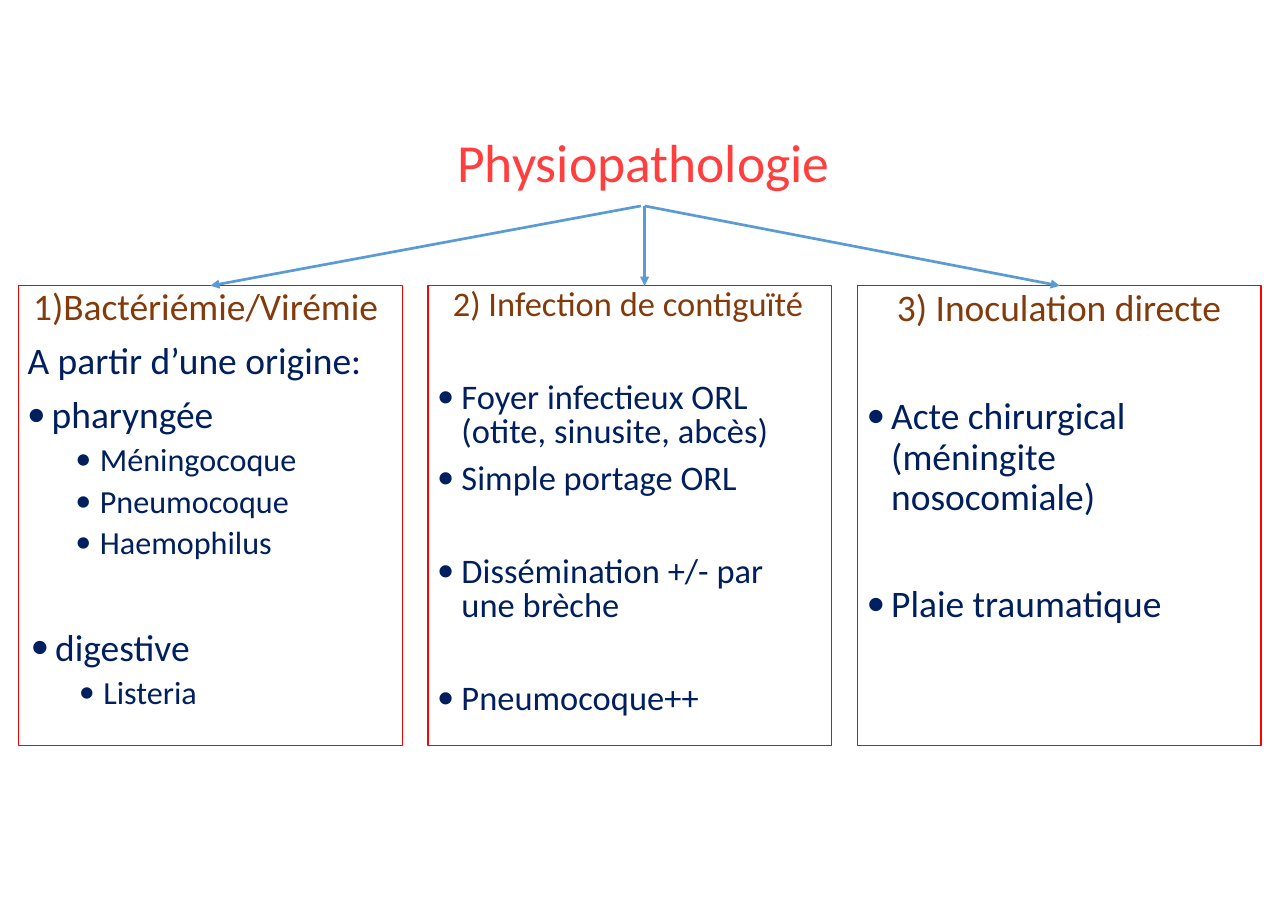
from lxml import etree
from pptx import Presentation
from pptx.dml.color import RGBColor
from pptx.enum import shapes, text
from pptx.oxml.ns import qn
from pptx.util import Pt

COLORS = {"title": "FF3E3E", "heading": "843B0B", "body": "001F5F",
          "frame": "FF0000", "arrow": "5A9AD5"}
BULLET_HANG = 16
# Text indent of each bullet level
LEVEL_INDENT = {1: 16.5, 2: 48}

FRAME_TOP, FRAME_HEIGHT, FRAME_GAP = 186.8, 300.4, 16.4
FRAME_WIDTHS = (251.4, 264, 264)
ARROW_TOP = 134.6
ARROWS = ((418.8, 137.5), (421.2, 421.2), (421.2, 692.6))


def color(name):
    return RGBColor.from_string(COLORS[name])


def line(content, size, tone="body", level=0, before=0, spacing=None, indent=0):
    """Describe one paragraph; level 0 has no bullet."""
    return dict(content=content, size=size, tone=tone, level=level,
                before=before, spacing=spacing, indent=indent)


def add_paragraph(paragraph, item):
    paragraph.space_before = Pt(item["before"])
    if item["spacing"]:
        paragraph.line_spacing = item["spacing"]
    properties = paragraph._p.get_or_add_pPr()
    level = item["level"]
    if level:
        paragraph.level = level - 1
        properties.set("marL", str(Pt(LEVEL_INDENT[level])))
        properties.set("indent", str(-Pt(BULLET_HANG)))
        etree.SubElement(properties, qn("a:buFont")).set("typeface", "Calibri")
        etree.SubElement(properties, qn("a:buChar")).set("char", "•")
    else:
        properties.set("marL", str(Pt(item["indent"])))
    run = paragraph.add_run()
    run.text = item["content"]
    run.font.name = "Calibri"
    run.font.size = Pt(item["size"])
    run.font.color.rgb = color(item["tone"])


def add_text(slide, left, top, width, height, inset, *items):
    box = slide.shapes.add_textbox(Pt(left), Pt(top), Pt(width), Pt(height))
    frame = box.text_frame
    frame.word_wrap = True
    frame.vertical_anchor = text.MSO_ANCHOR.TOP
    frame.margin_left = frame.margin_right = frame.margin_bottom = 0
    frame.margin_top = Pt(inset)
    for index, item in enumerate(items):
        paragraph = frame.add_paragraph() if index else frame.paragraphs[0]
        add_paragraph(paragraph, item)


def add_frames(slide):
    left = 11.9
    for width in FRAME_WIDTHS:
        frame = slide.shapes.add_shape(
            shapes.MSO_SHAPE.RECTANGLE, Pt(left), Pt(FRAME_TOP),
            Pt(width), Pt(FRAME_HEIGHT))
        frame.shadow.inherit = False
        frame.fill.background()
        frame.line.color.rgb = color("frame")
        frame.line.width = Pt(0.75)
        left += width + FRAME_GAP


def add_arrow(slide, start, end):
    arrow = slide.shapes.add_connector(
        shapes.MSO_CONNECTOR.STRAIGHT, Pt(start), Pt(ARROW_TOP),
        Pt(end), Pt(FRAME_TOP))
    arrow.line.color.rgb = color("arrow")
    arrow.line.width = Pt(1.75)
    tip = etree.SubElement(arrow.line._get_or_add_ln(), qn("a:tailEnd"))
    tip.set("type", "triangle")
    etree.SubElement(arrow._element.spPr, qn("a:effectLst"))


def add_bacteremia(slide):
    add_text(slide, 17.3, 178.6, 240, 189, 0.7,
             line("1)Bactériémie/Virémie", 24.5, "heading", before=0.9,
                  spacing=1.2, indent=4.3),
             line("A partir d’une origine:", 24.5, spacing=1.2, indent=0.7),
             line("pharyngée", 24.5, level=1, before=5.9),
             *(line(germ, 21, level=2, before=2)
               for germ in ("Méningocoque", "Pneumocoque", "Haemophilus")))
    add_text(slide, 19.6, 404, 150, 61, 3.6,
             line("digestive", 24.5, level=1, before=3.6),
             line("Listeria", 21, level=2, before=2.2))


def add_contiguity(slide):
    left, width, size = 285.1, 221, 22.5
    tight = Pt(21.8)
    add_text(slide, 295.2, 182.9, 240, 29.5, 1.4,
             line("2) Infection de contiguïté", size, "heading",
                  before=1.3, indent=0.7))
    add_text(slide, left, 244.1, width, 82, 6.5,
             line("Foyer infectieux ORL (otite, sinusite, abcès)", size,
                  level=1, before=6.3, spacing=tight),
             line("Simple portage ORL", size, level=1, before=3.8))
    add_text(slide, left, 357.8, width, 51, 6.5,
             line("Dissémination +/- par une brèche", size, level=1,
                  before=6.3, spacing=tight))
    add_text(slide, left, 440.6, width, 29.5, 1.4,
             line("Pneumocoque++", size, level=1, before=1.3))


def add_inoculation(slide):
    left, size = 565.9, 24.5
    add_text(slide, 585.4, 184.3, 230, 31.7, 1.4,
             line("3) Inoculation directe", size, "heading",
                  before=1.1, indent=0.7))
    add_text(slide, left, 254.9, 180, 85, 4.3,
             line("Acte chirurgical (méningite nosocomiale)", size, level=1,
                  before=4.4, spacing=Pt(26.5)))
    add_text(slide, left, 378, 210, 31.7, 1.4,
             line("Plaie traumatique", size, level=1, before=1.1))


def main():
    deck = Presentation()
    deck.slide_width, deck.slide_height = Pt(841.68), Pt(594.72)
    slide = deck.slides.add_slide(deck.slide_layouts[6])
    add_text(slide, 298.8, 83.5, 280, 44, 0.7,
             line("Physiopathologie", 35, "title", before=1))
    add_frames(slide)
    add_bacteremia(slide)
    add_contiguity(slide)
    add_inoculation(slide)
    for start, end in ARROWS:
        add_arrow(slide, start, end)
    deck.save("out.pptx")


if __name__ == "__main__":
    main()
